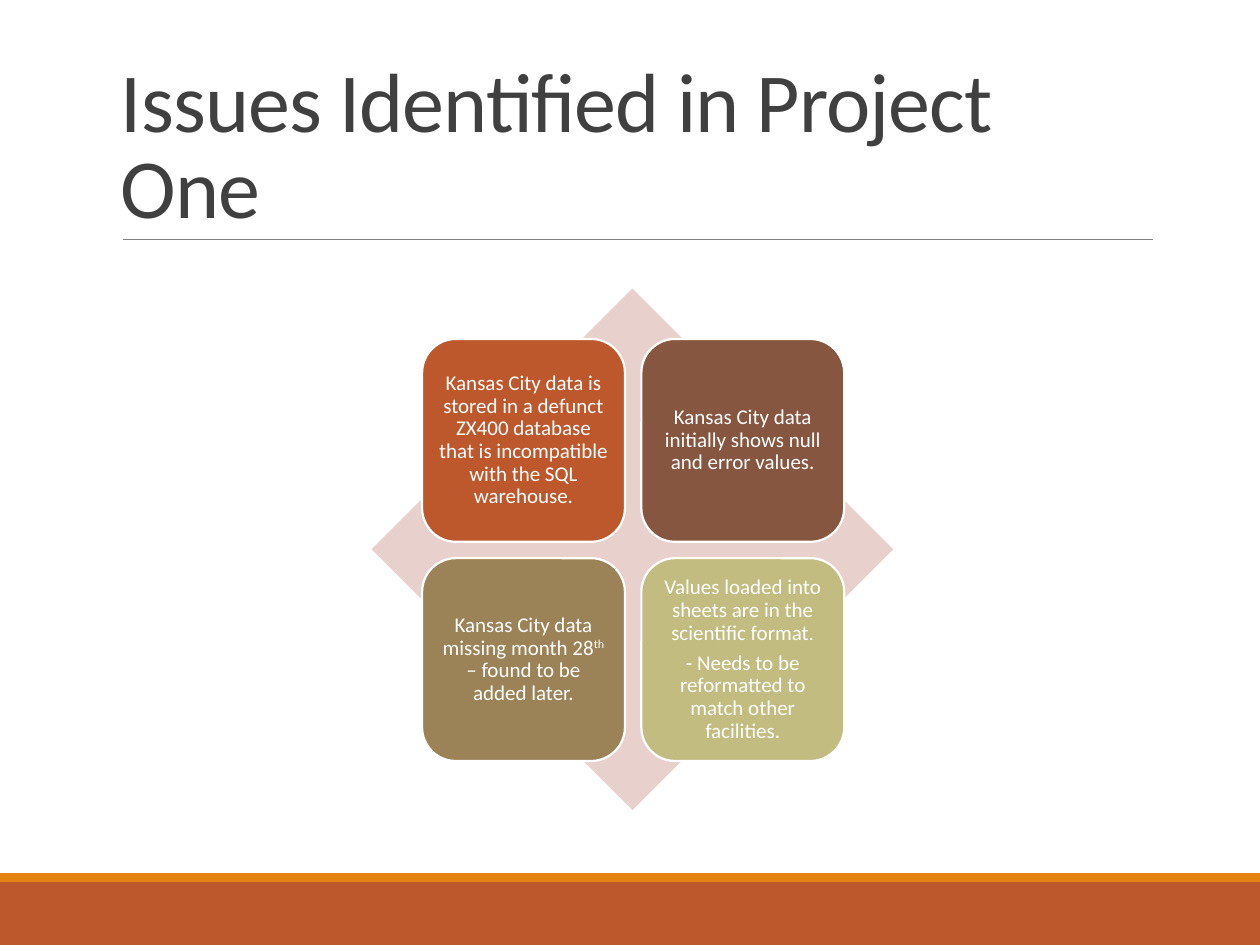
from pptx import Presentation
from pptx.dml.color import RGBColor
from pptx.enum.shapes import MSO_CONNECTOR, MSO_SHAPE
from pptx.enum.text import MSO_ANCHOR, PP_ALIGN
from pptx.oxml.ns import qn
from pptx.util import Inches, Pt
from lxml import etree

CARDS = [
    ("BD582C", [["Kansas City data is stored in a defunct ZX400 database "
                 "that is incompatible with the SQL warehouse."]]),
    ("865640", [["Kansas City data initially shows null and error values."]]),
    ("9B8357", [["Kansas City data missing month 28", "th",
                 " – found to be added later."]]),
    ("C2BC80", [["Values loaded into sheets are in the scientific format."],
                ["- Needs to be reformatted to match other facilities."]]),
]


def paint(color, code):
    color.rgb = RGBColor.from_string(code)


def style(run, size, code):
    run.font.name = "Calibri"
    run.font.size = Pt(size)
    paint(run.font.color, code)


def inset(frame, side, top):
    frame.word_wrap = True
    frame.margin_left = frame.margin_right = Inches(side)
    frame.margin_top = frame.margin_bottom = Inches(top)


def add_block(slide, kind, left, top, width, height, code):
    block = slide.shapes.add_shape(
        kind, Inches(left), Inches(top), Inches(width), Inches(height))
    block.shadow.inherit = False
    block.fill.solid()
    paint(block.fill.fore_color, code)
    block.line.fill.background()
    return block


def add_rule(slide, left, right, top):
    rule = slide.shapes.add_connector(
        MSO_CONNECTOR.STRAIGHT, Inches(left), Inches(top), Inches(right), Inches(top))
    rule.line.width = Pt(0.5)
    paint(rule.line.color, "808080")
    etree.SubElement(rule._element.spPr, qn("a:effectLst"))


def add_title(slide, text):
    box = slide.shapes.add_textbox(
        Inches(0.9), Inches(0.31), Inches(8.25), Inches(1.59))
    frame = box.text_frame
    inset(frame, 0.06, 0.03)
    frame.vertical_anchor = MSO_ANCHOR.BOTTOM
    frame.text = text
    line = frame.paragraphs[0]
    line.line_spacing = 0.85
    run = line.runs[0]
    style(run, 48, "404040")
    run.font._element.set("spc", "-50")


def add_card(slide, left, top, side, code, texts):
    card = add_block(slide, MSO_SHAPE.ROUNDED_RECTANGLE, left, top, side, side, code)
    paint(card.line.color, "FFFFFF")
    card.line.width = Pt(1.25)
    frame = card.text_frame
    inset(frame, 0.05, 0.05)
    frame.vertical_anchor = MSO_ANCHOR.MIDDLE
    for index, parts in enumerate(texts):
        line = frame.add_paragraph() if index else frame.paragraphs[0]
        line.alignment = PP_ALIGN.CENTER
        line.line_spacing = 0.9
        line.space_before = Pt(4.2 if index else 0)
        for part in parts:
            run = line.add_run()
            run.text = part
            style(run, 12, "FFFFFF")
            if part == "th":
                run.font._element.set("baseline", "30000")


def main():
    deck = Presentation()
    deck.slide_width, deck.slide_height = Inches(10), Inches(7.5)
    slide = deck.slides.add_slide(deck.slide_layouts[6])
    add_block(slide, MSO_SHAPE.RECTANGLE, 0, 7, 10, 0.5, "BD582C")
    add_block(slide, MSO_SHAPE.RECTANGLE, 0, 6.93, 10, 0.07, "E48312")
    add_rule(slide, 0.98, 9.15, 1.9)
    add_title(slide, "Issues Identified in Project One")
    add_block(slide, MSO_SHAPE.DIAMOND, 2.95, 2.29, 4.14, 4.14, "E8D1CD")
    side, step = 1.61, 1.74
    for index, (code, texts) in enumerate(CARDS):
        row, col = divmod(index, 2)
        add_card(slide, 3.35 + col * step, 2.69 + row * step, side, code, texts)
    deck.save("out.pptx")


if __name__ == "__main__":
    main()
